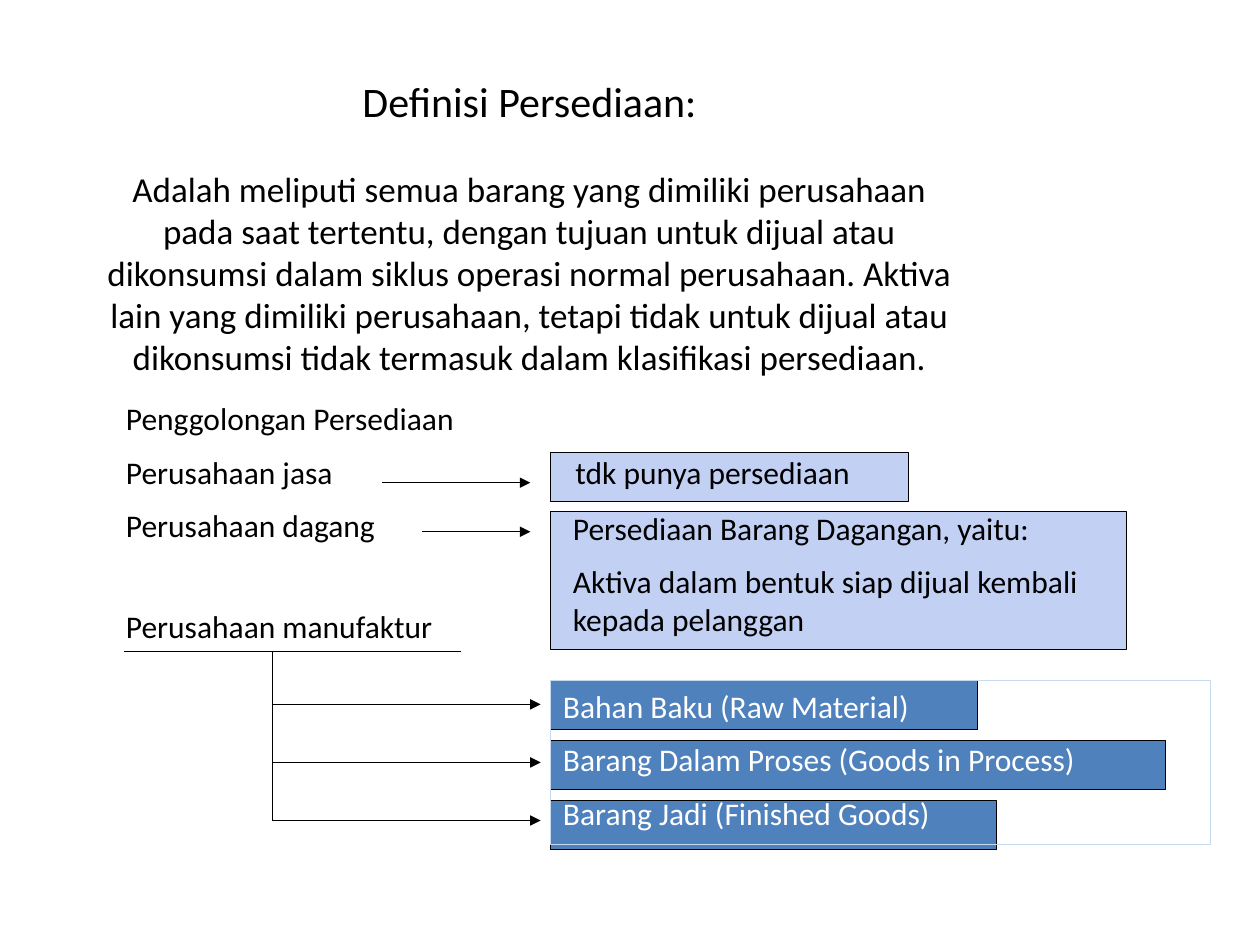
from lxml.etree import SubElement
from pptx import Presentation
from pptx.dml.color import RGBColor as RGB
from pptx.enum.shapes import MSO_CONNECTOR as LINK, MSO_SHAPE as SHAPE
from pptx.enum.text import MSO_ANCHOR as ANCHOR, PP_ALIGN as ALIGN
from pptx.oxml.ns import qn
from pptx.util import Cm, Pt

HUES = {"ink": "000000", "white": "FFFFFF", "pale": "C2D0F4",
        "blue": "4F81BD", "frame": "C6D9F1"}
FONT = "Calibri"
GAP = 9  # points between paragraphs


def hue(name):
    return RGB.from_string(HUES[name])


def add_rect(slide, x, y, w, h, fill=None, line="ink"):
    rect = slide.shapes.add_shape(SHAPE.RECTANGLE, Cm(x), Cm(y), Cm(w), Cm(h))
    rect.shadow.inherit = False
    if fill:
        rect.fill.solid()
        rect.fill.fore_color.rgb = hue(fill)
    else:
        rect.fill.background()
    rect.line.color.rgb = hue(line)
    rect.line.width = Pt(0.75)
    return rect


def add_line(slide, x1, y1, x2, y2, arrow=False):
    line = slide.shapes.add_connector(LINK.STRAIGHT, Cm(x1), Cm(y1), Cm(x2), Cm(y2))
    line.line.color.rgb = hue("ink")
    line.line.width = Pt(0.75)
    if arrow:
        SubElement(line.line._get_or_add_ln(), qn("a:tailEnd"), type="triangle")
    SubElement(line._element.spPr, qn("a:effectLst"))


def set_text(shape, texts, sizes=None, color="ink", align=ALIGN.LEFT,
             anchor=ANCHOR.TOP, gap=GAP):
    frame = shape.text_frame
    frame.word_wrap = True
    frame.vertical_anchor = anchor
    frame.text = "\n".join(texts)
    for i, para in enumerate(frame.paragraphs):
        para.alignment = align
        if i:
            para.space_before = Pt(gap)
        for run in para.runs:
            run.font.name = FONT
            run.font.size = Pt(sizes[i] if sizes else 18)
            run.font.color.rgb = hue(color)


def add_text(slide, x, y, w, h, texts, **style):
    box = slide.shapes.add_textbox(Cm(x), Cm(y), Cm(w), Cm(h))
    set_text(box, texts, **style)
    return box


def add_stop(para, pos):
    """Put a left tab stop at pos centimetres."""
    stops = SubElement(para._p.get_or_add_pPr(), qn("a:tabLst"))
    SubElement(stops, qn("a:tab"), pos=str(Cm(pos)), algn="l")


def add_intro(slide, x, y, w, h):
    add_text(slide, x, y, w, h, [
        "Definisi Persediaan:",
        "Adalah meliputi semua barang yang dimiliki perusahaan pada saat tertentu, "
        "dengan tujuan untuk dijual atau dikonsumsi dalam siklus operasi normal "
        "perusahaan. Aktiva lain yang dimiliki perusahaan, tetapi tidak untuk dijual "
        "atau dikonsumsi tidak termasuk dalam klasifikasi persediaan."],
        sizes=[24, 20], align=ALIGN.CENTER, anchor=ANCHOR.MIDDLE, gap=24)


def add_types(slide, x, y, w, h):
    """Service and trading firms, each with an arrow to its stock."""
    add_rect(slide, x + 8.81, y + 1.2, 7.21, 0.99, "pale")
    add_rect(slide, x + 8.81, y + 2.39, 11.61, 2.79, "pale")
    firms = add_text(slide, x, y, w, h, [
        "Penggolongan Persediaan",
        "Perusahaan jasa\ttdk punya persediaan",
        "Perusahaan dagang"])
    add_stop(firms.text_frame.paragraphs[1], 9.06)
    add_text(slide, x + 9.01, y + 2.21, 11.4, 2.92, [
        "Persediaan Barang Dagangan, yaitu:",
        "Aktiva dalam bentuk siap dijual kembali kepada pelanggan"])
    for start, top in ((5.41, 1.81), (6.22, 2.8)):
        add_line(slide, x + start, y + top, x + 8.4, y + top, arrow=True)


def add_maker(slide, x, y, w, h):
    """Manufacturing firm with a tree of three kinds of stock."""
    goods = [("Bahan Baku (Raw Material)", 8.61),
             ("Barang Dalam Proses (Goods in Process)", 12.4),
             ("Barang Jadi (Finished Goods)", 8.99)]
    left, top, base, trunk = x + 8.81, y + 1.6, y + 1.01, x + 3.2
    for i, (_, wide) in enumerate(goods):
        add_rect(slide, left, top + i * 1.21, wide, 0.99, "blue")
    frame = add_rect(slide, left, top, x + w - left, 3.3, line="frame")
    set_text(frame, [name for name, _ in goods], color="white")
    add_text(slide, x, y, 7.8, 1.02, ["Perusahaan manufaktur"])
    add_line(slide, x + 0.2, base, x + 7.01, base)
    add_line(slide, trunk, base, trunk, y + h)
    for i in range(len(goods)):
        level = y + h - i * 1.17
        add_line(slide, trunk, level, x + 8.61, level, arrow=True)


def main():
    deck = Presentation()
    deck.slide_width, deck.slide_height = Cm(25.4), Cm(19.05)
    slide = deck.slides.add_slide(deck.slide_layouts[6])
    add_intro(slide, 1.9, 1.19, 17.55, 6.76)
    add_types(slide, 2.29, 7.92, 21, 3.3)
    add_maker(slide, 2.29, 12.12, 22.12, 4.42)
    deck.save("out.pptx")


if __name__ == "__main__":
    main()
